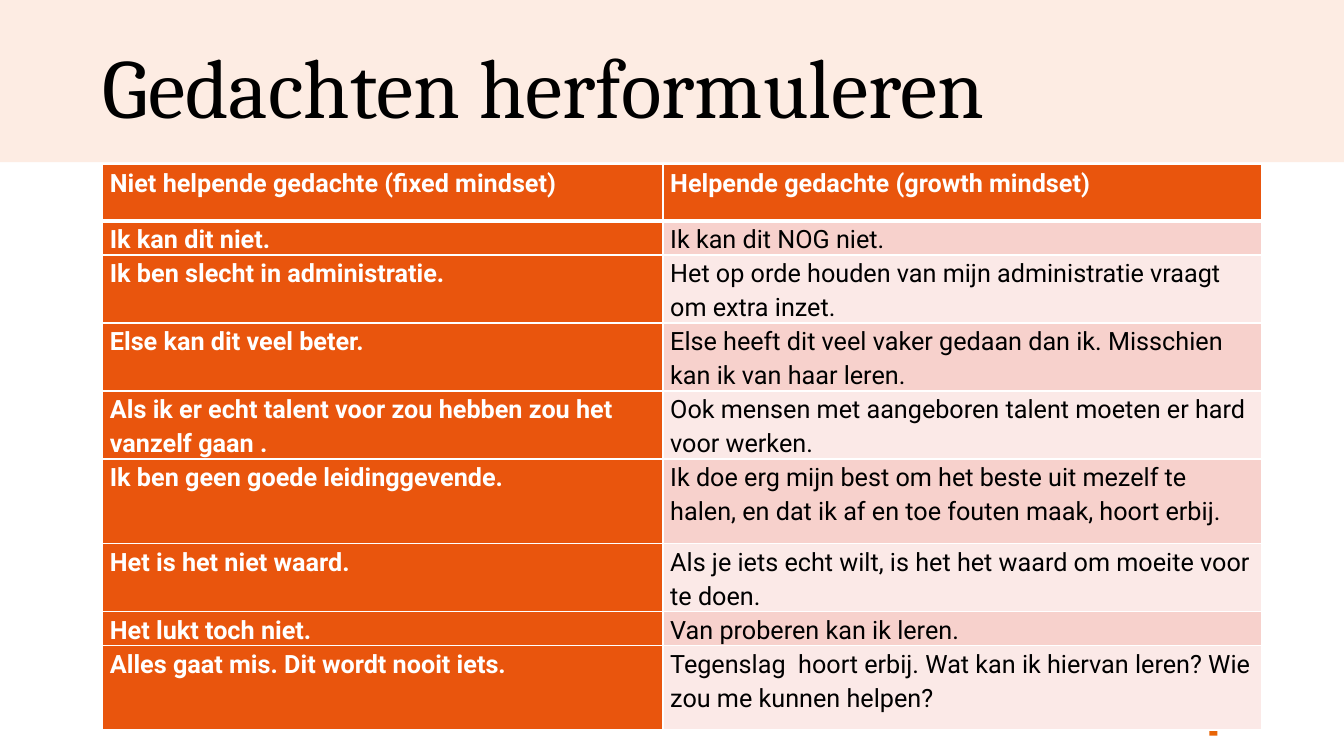
import lxml.etree
import pptx
import pptx.dml.color
import pptx.enum.shapes
import pptx.enum.text
import pptx.oxml.ns
import pptx.util
from pptx.util import Cm

theme = {
    "band": "FDECE3",
    "accent": "E86507",
    "orange": "E9550D",
    "stripes": ("FBE9E7", "F7D1CC"),
    "white": "FFFFFF",
    "black": "000000",
    "title_font": "Cambria",
    "title_size": 60,
    "table_font": "Roboto",
    "table_size": 18,
}

thoughts = [
    ("Niet helpende gedachte (fixed mindset)", "Helpende gedachte (growth mindset)"),
    ("Ik kan dit niet.", "Ik kan dit NOG niet."),
    ("Ik ben slecht in administratie.",
     "Het op orde houden van mijn administratie vraagt om extra inzet."),
    ("Else kan dit veel beter.",
     "Else heeft dit veel vaker gedaan dan ik. Misschien kan ik van haar leren."),
    ("Als ik er echt talent voor zou hebben zou het vanzelf gaan .",
     "Ook mensen met aangeboren talent moeten er hard voor werken."),
    ("Ik ben geen goede leidinggevende.",
     "Ik doe erg mijn best om het beste uit mezelf te halen, en dat ik af en toe fouten maak, hoort erbij."),
    ("Het is het niet waard.",
     "Als je iets echt wilt, is het het waard om moeite voor te doen."),
    ("Het lukt toch niet.", "Van proberen kan ik leren."),
    ("Alles gaat mis. Dit wordt nooit iets.",
     "Tegenslag  hoort erbij. Wat kan ik hiervan leren? Wie zou me kunnen helpen?"),
]
line_height = 0.71
row_lines = (2, 1, 2, 2, 2, 3, 2, 1, 3)
column_widths = (14.12, 15.09)


def add_run(paragraph, text, font, size, color, bold=False):
    run = paragraph.add_run()
    run.text = text
    run.font.name = font
    run.font.size = pptx.util.Pt(size)
    run.font.bold = bold
    run.font.color.rgb = pptx.dml.color.RGBColor.from_string(color)


def add_border(cell, side, points):
    qn = pptx.oxml.ns.qn
    properties = cell._tc.get_or_add_tcPr()
    line = lxml.etree.SubElement(properties, qn(f"a:ln{side}"), w=str(pptx.util.Pt(points)))
    fill = lxml.etree.SubElement(line, qn("a:solidFill"))
    lxml.etree.SubElement(fill, qn("a:srgbClr"), val=theme["white"])


presentation = pptx.Presentation()
presentation.slide_width = Cm(33.87)
presentation.slide_height = Cm(19.05)
slide = presentation.slides.add_slide(presentation.slide_layouts[6])

for left, top, width, height, color in (
    (0, 0, 33.87, 4.09, theme["band"]),
    (30.48, 17.78, 0.2, 0.76, theme["accent"]),
):
    shape = slide.shapes.add_shape(
        pptx.enum.shapes.MSO_SHAPE.RECTANGLE, Cm(left), Cm(top), Cm(width), Cm(height))
    shape.shadow.inherit = False
    shape.fill.solid()
    shape.fill.fore_color.rgb = pptx.dml.color.RGBColor.from_string(color)
    shape.line.fill.background()

table = slide.shapes.add_table(
    len(thoughts), len(column_widths), Cm(2.59), Cm(4.15),
    Cm(sum(column_widths)), Cm(line_height * sum(row_lines))).table
for column, width in zip(table.columns, column_widths):
    column.width = Cm(width)
for row, lines in zip(table.rows, row_lines):
    row.height = Cm(line_height * lines)

for row_index, texts in enumerate(thoughts):
    for column_index, text in enumerate(texts):
        cell = table.cell(row_index, column_index)
        emphasized = row_index == 0 or column_index == 0
        cell.margin_left = cell.margin_right = Cm(0.18)
        cell.margin_top = cell.margin_bottom = 0
        for side in "LRTB":
            below_header = (row_index, side) in ((0, "B"), (1, "T"))
            add_border(cell, side, 3 if below_header else 1)
        cell.fill.solid()
        cell.fill.fore_color.rgb = pptx.dml.color.RGBColor.from_string(
            theme["orange"] if emphasized else theme["stripes"][row_index % 2])
        paragraph = cell.text_frame.paragraphs[0]
        paragraph.line_spacing = 1.15
        paragraph.space_after = pptx.util.Pt(10)
        add_run(paragraph, text, theme["table_font"], theme["table_size"],
                theme["white"] if emphasized else theme["black"], emphasized)

title = slide.shapes.add_textbox(Cm(2.34), Cm(1.04), Cm(25.22), Cm(2.16))
title.text_frame.word_wrap = True
title.text_frame.vertical_anchor = pptx.enum.text.MSO_ANCHOR.TOP
paragraph = title.text_frame.paragraphs[0]
paragraph.line_spacing = 0.9
add_run(paragraph, "Gedachten herformuleren", theme["title_font"],
        theme["title_size"], theme["black"])

presentation.save("out.pptx")
